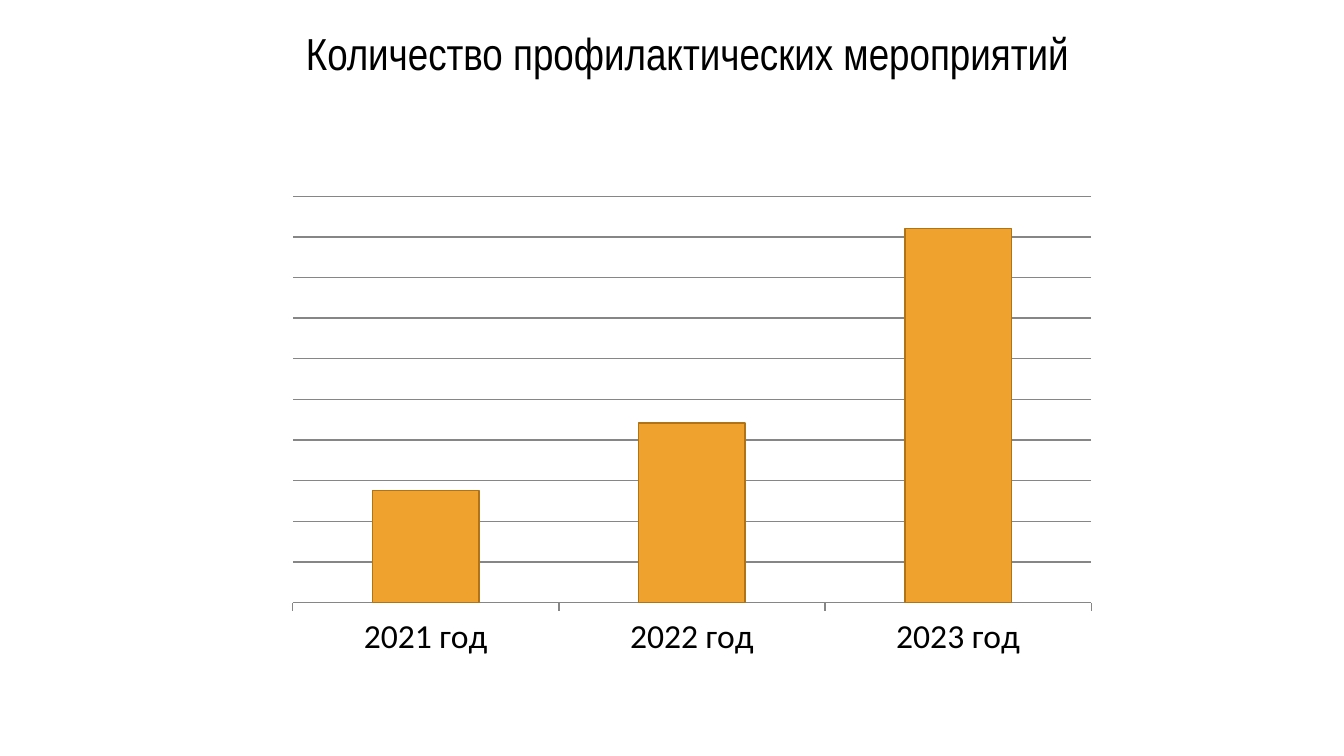
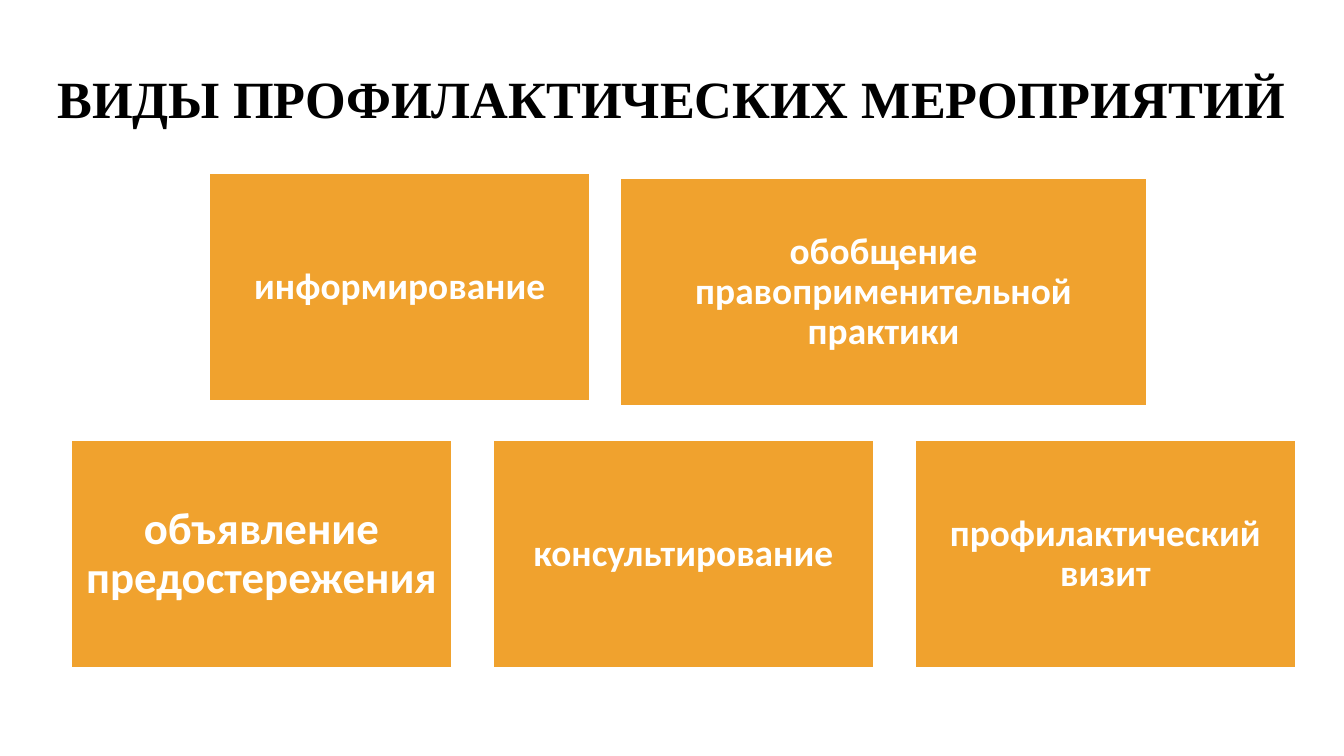
import pptx
import pptx.chart.data
import pptx.dml.color
import pptx.enum.chart
import pptx.enum.shapes
import pptx.enum.text
import pptx.oxml
import pptx.oxml.ns
import pptx.util

Inches, Pt = pptx.util.Inches, pptx.util.Pt
MIDDLE = pptx.enum.text.MSO_ANCHOR.MIDDLE
TOP = pptx.enum.text.MSO_ANCHOR.TOP
CENTER = pptx.enum.text.PP_ALIGN.CENTER
LEFT = pptx.enum.text.PP_ALIGN.LEFT

CHART_TITLE = "Количество профилактических мероприятий"
SERIES = "Series 1"
YEARS = {"2021 год": 30, "2022 год": 48, "2023 год": 100}

KINDS_TITLE = "ВИДЫ ПРОФИЛАКТИЧЕСКИХ МЕРОПРИЯТИЙ"
KIND_ROWS = [
    {"left": 1.55, "gap": 0.21, "cards": [
        ("информирование", "card", 2.85, 1.28),
        ("обобщение правоприменительной практики", "card", 3.93, 1.32),
    ]},
    {"left": 0.52, "gap": 0.29, "cards": [
        ("объявление предостережения", "card_large", 2.85, 3.27),
        ("консультирование", "card", 2.85, 3.27),
        ("профилактический визит", "card", 2.85, 3.27),
    ]},
]

WIDTH = 10
HEIGHT = WIDTH * 9 / 16
CARD_HEIGHT = 1.71
CHART_BOX = (1.67, 1.24, 6.67, 3.8)
PLOT = {"x": 0.076, "y": 0.058, "w": 0.891, "h": 0.796}
GRID_STEPS = 10
TALLEST_SHARE = 0.92

THEME = {
    "accent": "F0A22E", "accent_dark": "B07417", "grid": "868686",
    "text": "000000", "paper": "FFFFFF",
    "fonts": {
        "chart_title": ("Arial Narrow", 24, False),
        "kinds_title": ("Times New Roman", 28, True),
        "axis": ("Calibri", 18, False),
        "card": ("Calibri", 20, True),
        "card_large": ("Calibri", 24, True),
    },
}


def color(name):
    return pptx.dml.color.RGBColor.from_string(THEME[name])


def set_font(font, style, ink):
    font.name, size, font.bold = THEME["fonts"][style]
    font.size = Pt(size)
    font.color.rgb = color(ink)


def set_line(line, name, width):
    line.color.rgb = color(name)
    line.width = Pt(width)


def write(shape, text, style, ink, align, anchor):
    tf = shape.text_frame
    tf.word_wrap = True
    tf.vertical_anchor = anchor
    tf.text = text
    p = tf.paragraphs[0]
    p.alignment = align
    set_font(p.runs[0].font, style, ink)
    return tf


def add_title(s, text, style, box, align, anchor):
    sp = s.shapes.add_textbox(*map(Inches, box))
    return write(sp, text, style, "text", align, anchor)


def add_card(s, text, style, left, top, width):
    sp = s.shapes.add_shape(
        pptx.enum.shapes.MSO_SHAPE.RECTANGLE,
        *map(Inches, (left, top, width, CARD_HEIGHT)))
    sp.shadow.inherit = False
    sp.fill.solid()
    sp.fill.fore_color.rgb = color("accent")
    set_line(sp.line, "paper", 2)
    tf = write(sp, text, style, "paper", CENTER, MIDDLE)
    size = THEME["fonts"][style][1]
    inset = Inches(size / 240)
    tf.margin_left = tf.margin_right = inset
    tf.margin_top = tf.margin_bottom = inset
    p = tf.paragraphs[0]
    p.line_spacing = 0.9
    p.space_after = Pt(size * 0.35)


def place_plot(chart):
    plot_area = chart._chartSpace.chart.plotArea
    for old in plot_area.findall(pptx.oxml.ns.qn("c:layout")):
        plot_area.remove(old)
    modes = "".join(f'<c:{k}Mode val="edge"/>' for k in "xy")
    sizes = "".join(f'<c:{k} val="{v}"/>' for k, v in PLOT.items())
    plot_area.insert(0, pptx.oxml.parse_xml(
        f'<c:layout {pptx.oxml.ns.nsdecls("c")}><c:manualLayout>'
        f'<c:layoutTarget val="inner"/>{modes}{sizes}'
        '</c:manualLayout></c:layout>'))


def add_year_chart(s):
    data = pptx.chart.data.CategoryChartData()
    data.categories = list(YEARS)
    data.add_series(SERIES, list(YEARS.values()))
    chart = s.shapes.add_chart(
        pptx.enum.chart.XL_CHART_TYPE.COLUMN_STACKED,
        *map(Inches, CHART_BOX), data).chart
    chart.has_legend = False
    chart.has_title = False
    set_font(chart.font, "axis", "text")

    plot = chart.plots[0]
    plot.vary_by_categories = False
    plot.gap_width = 150
    plot.overlap = 100
    bars = plot.series[0].format
    bars.fill.solid()
    bars.fill.fore_color.rgb = color("accent")
    set_line(bars.line, "accent_dark", 0.75)

    values = chart.value_axis
    values.minimum_scale = 0
    values.maximum_scale = round(max(YEARS.values()) / TALLEST_SHARE, 1)
    values.major_unit = values.maximum_scale / GRID_STEPS
    values.has_major_gridlines = True
    set_line(values.major_gridlines.format.line, "grid", 0.75)
    values.visible = False

    years = chart.category_axis
    years.major_tick_mark = pptx.enum.chart.XL_TICK_MARK.OUTSIDE
    set_line(years.format.line, "grid", 0.75)
    place_plot(chart)


def add_slide(prs):
    s = prs.slides.add_slide(prs.slide_layouts[6])
    s.background.fill.solid()
    s.background.fill.fore_color.rgb = color("paper")
    return s


def build_chart_slide(prs):
    s = add_slide(prs)
    tf = add_title(s, CHART_TITLE, "chart_title",
                   (0.35, 0.14, 9.53, 0.5), CENTER, TOP)
    tf.auto_size = pptx.enum.text.MSO_AUTO_SIZE.SHAPE_TO_FIT_TEXT
    add_year_chart(s)


def build_kinds_slide(prs):
    s = add_slide(prs)
    add_title(s, KINDS_TITLE, "kinds_title",
              (0.33, 0.38, 9.5, 0.69), LEFT, MIDDLE)
    for row in KIND_ROWS:
        left = row["left"]
        for text, style, width, top in row["cards"]:
            add_card(s, text, style, left, top, width)
            left += width + row["gap"]


def main():
    prs = pptx.Presentation()
    prs.slide_width, prs.slide_height = Inches(WIDTH), Inches(HEIGHT)
    build_chart_slide(prs)
    build_kinds_slide(prs)
    prs.save("out.pptx")


if __name__ == "__main__":
    main()
